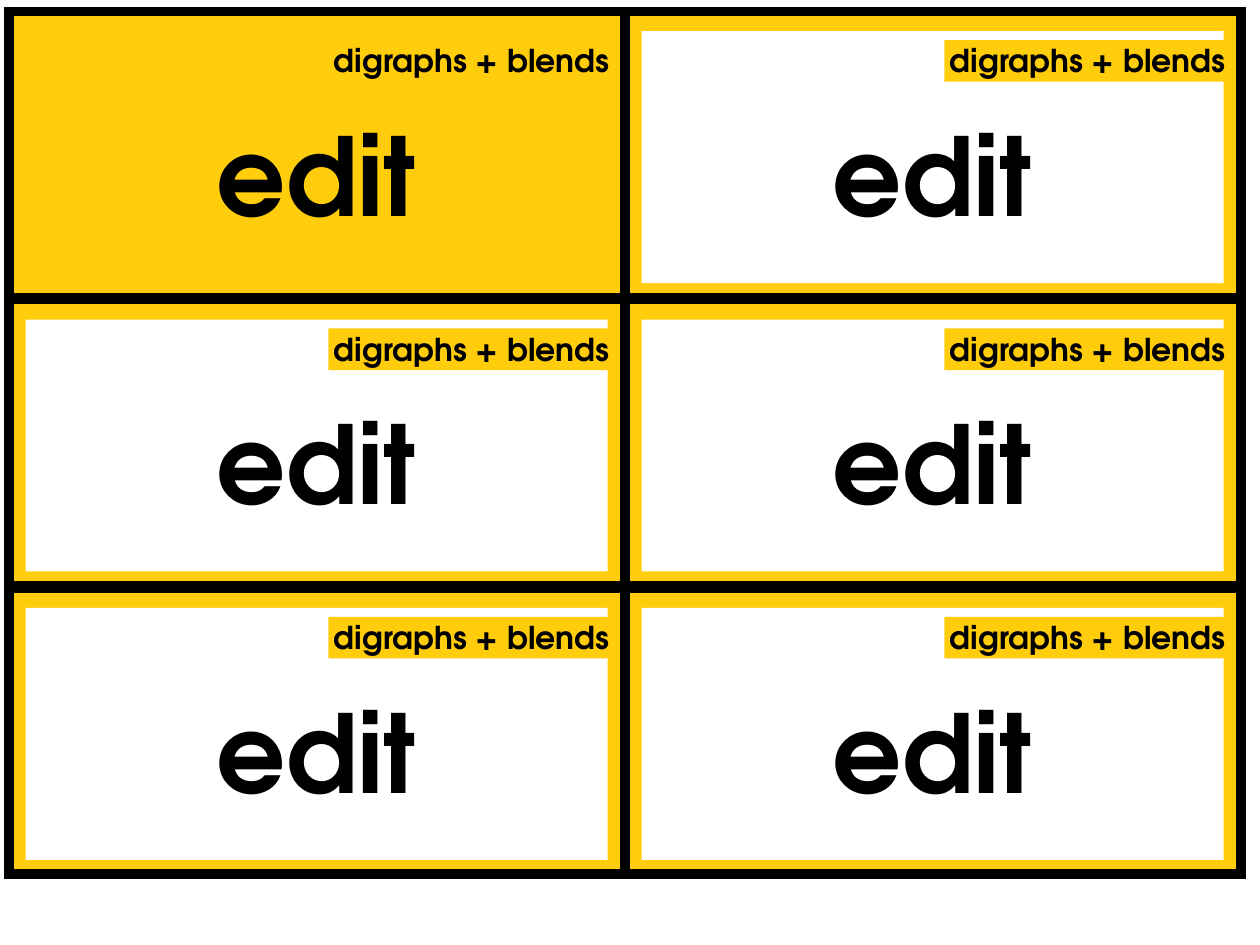
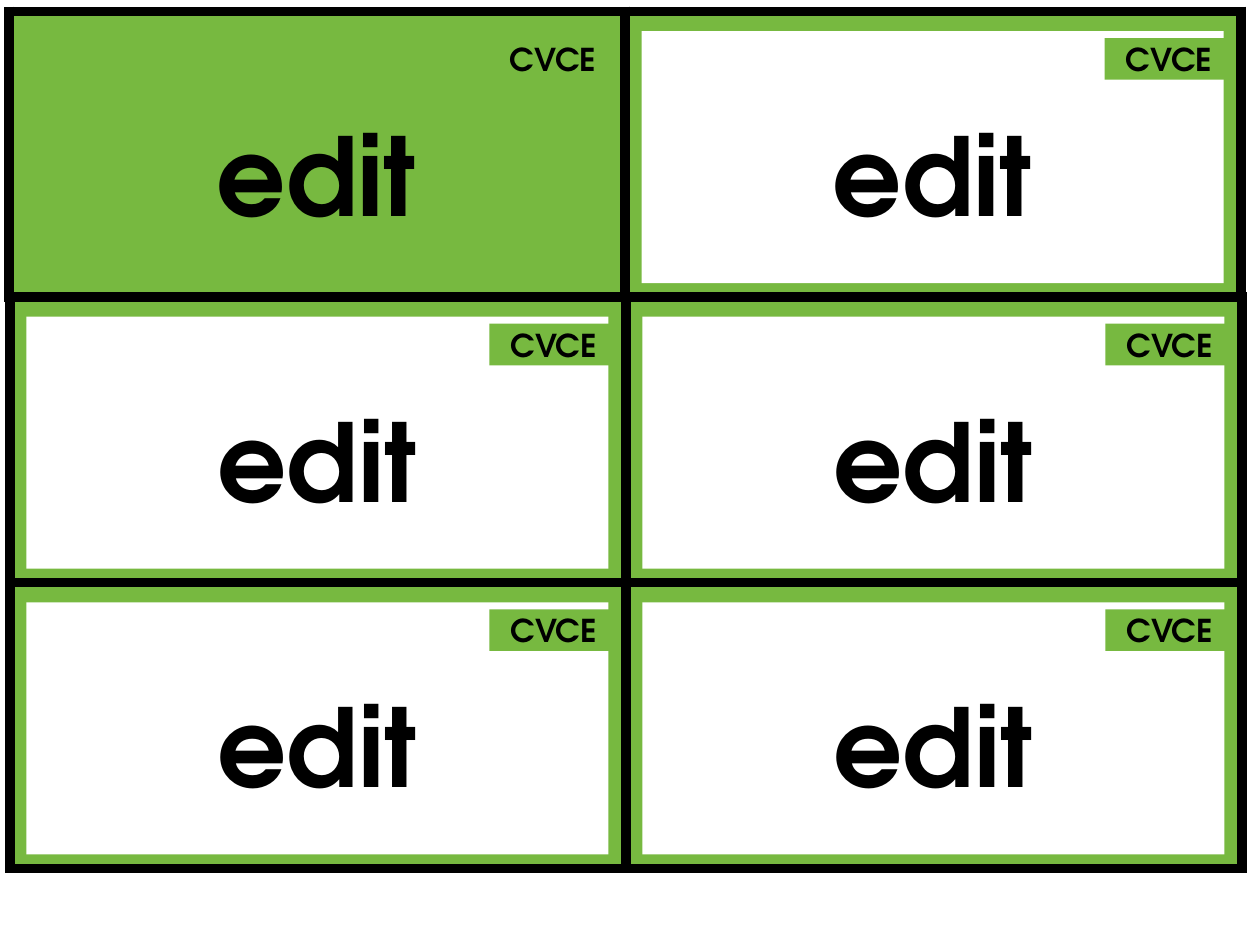
from lxml import etree
from pptx import Presentation
from pptx.dml.color import RGBColor
from pptx.enum import shapes, text
from pptx.oxml import ns
from pptx.util import Pt

BLACK, WHITE = "000000", "FFFFFF"
YELLOW, GREEN = "FFCD0B", "77B940"
FONT = "TeX Gyre Adventor"

COLUMNS, ROWS = 2, 3
GRID_LEFT, GRID_TOP = 5.2, 6.5
CARD_WIDTH, CARD_HEIGHT = 352, 163.4
BORDER = 6

# Left, top, width and height in points, measured from the card's corner
PANEL = (9.4, 11.3, 332.6, 144)
WORD = (2.5, 51.7, 346.3, 82)
WIDE_BAND = (182.5, 16.4, 164.2, 23.8)
WIDE_LABEL = (172.9, 13.6, 182.9, 28.8)
SHORT_BAND = (274, 15.3, 73.4, 23.8)


def color(value):
    return RGBColor.from_string(value)


class CardDeck:
    """Holds the deck, its style, the current page and the current card corner."""

    def __init__(self):
        self.deck = Presentation()
        self.deck.slide_width, self.deck.slide_height = Pt(720), Pt(540)

    def new_page(self, accent):
        self.page = self.deck.slides.add_slide(self.deck.slide_layouts[6])
        self.accent = accent

    def place(self, area):
        """Turn an area measured from the card's corner into slide lengths."""
        left, top, width, height = area
        return Pt(self.left + left), Pt(self.top + top), Pt(width), Pt(height)

    def frame(self):
        """Draw the bordered card as a table of one cell."""
        table = self.page.shapes.add_table(
            1, 1, *self.place((0, 0, CARD_WIDTH, CARD_HEIGHT))).table
        table.first_row = table.horz_banding = False
        cell = table.cell(0, 0)
        properties = cell._tc.get_or_add_tcPr()
        for side in ("lnL", "lnR", "lnT", "lnB"):
            line = etree.SubElement(properties, ns.qn(f"a:{side}"), w=str(Pt(BORDER)))
            fill = etree.SubElement(line, ns.qn("a:solidFill"))
            etree.SubElement(fill, ns.qn("a:srgbClr"), val=BLACK)
        cell.fill.solid()
        cell.fill.fore_color.rgb = color(self.accent)

    def block(self, area, fill):
        box = self.page.shapes.add_shape(
            shapes.MSO_SHAPE.RECTANGLE, *self.place(area))
        box.shadow.inherit = False
        box.fill.solid()
        box.fill.fore_color.rgb = color(fill)
        box.line.fill.background()
        return box

    def set_words(self, box, words, size):
        box.text_frame.text = words
        box.text_frame.word_wrap = True
        para = box.text_frame.paragraphs[0]
        para.alignment = text.PP_ALIGN.CENTER
        font = para.runs[0].font
        font.name, font.size, font.bold = FONT, Pt(size), True
        font.color.rgb = color(BLACK)

    def label(self, area, words, size):
        box = self.page.shapes.add_textbox(*self.place(area))
        self.set_words(box, words, size)
        box.text_frame.auto_size = text.MSO_AUTO_SIZE.SHAPE_TO_FIT_TEXT

    def card(self, left, top, topic, header, band, topic_area):
        """Draw one card; a header card has no white panel."""
        self.left, self.top = left, top
        self.frame()
        if not header:
            self.block(PANEL, WHITE)
        self.label(WORD, "edit", 62)
        band_box = self.block(band, self.accent)
        if topic_area:
            self.label(topic_area, topic, 18)
        else:
            self.set_words(band_box, topic, 18)

    def card_page(self, accent, topic, row_step, band, topic_area=None, lower_shift=0):
        """Fill a page with cards; lower_shift moves the rows below the first."""
        self.new_page(accent)
        for row in range(ROWS):
            for column in range(COLUMNS):
                left = GRID_LEFT + column * CARD_WIDTH + (lower_shift if row else 0)
                top = GRID_TOP + row * row_step
                self.card(left, top, topic, row == column == 0, band, topic_area)


def main():
    cards = CardDeck()
    cards.card_page(YELLOW, "digraphs + blends", 164.8, WIDE_BAND, WIDE_LABEL)
    cards.card_page(GREEN, "CVCE", 163.2, SHORT_BAND, lower_shift=0.5)
    cards.deck.save("out.pptx")


if __name__ == "__main__":
    main()
